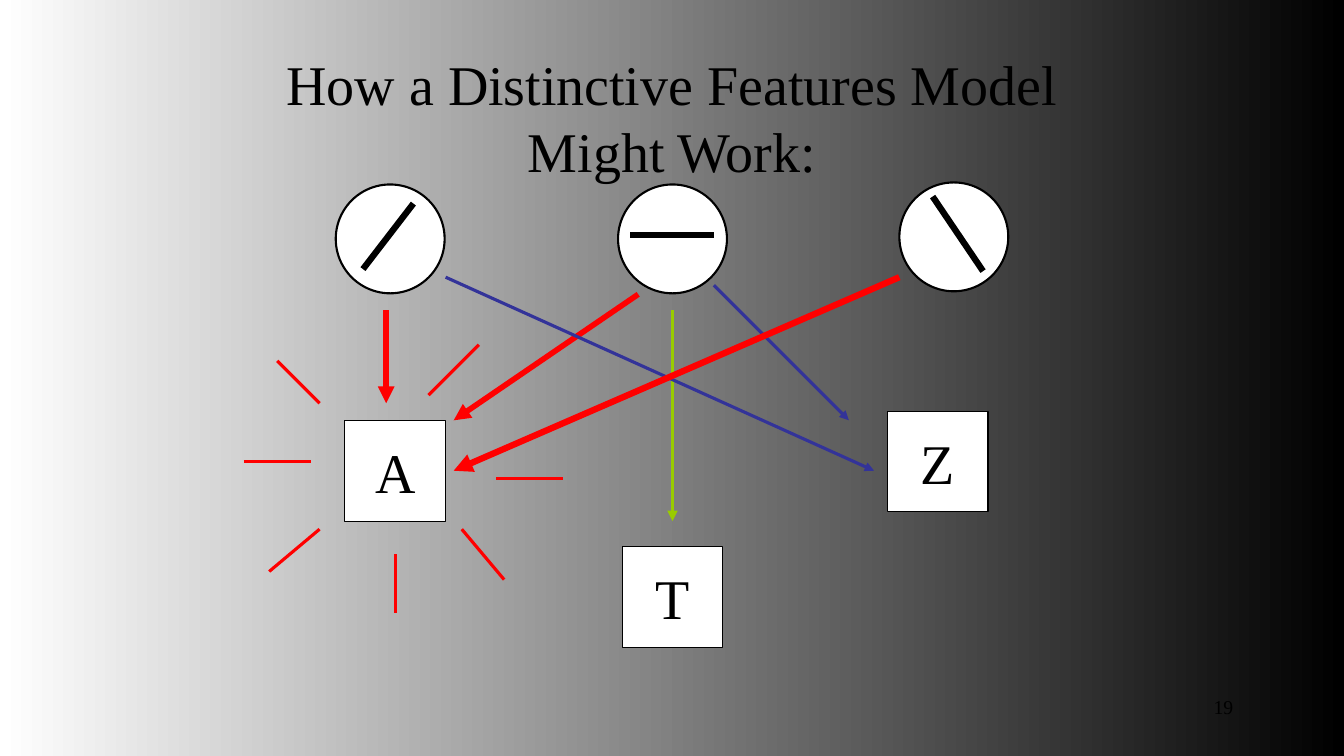
import pptx
import pptx.util
import pptx.dml.color
import pptx.enum.shapes
import pptx.enum.text
import pptx.oxml.ns
from dataclasses import dataclass
from lxml import etree

PX = 9144
SHAPE = pptx.enum.shapes.MSO_SHAPE
ALIGN = pptx.enum.text.PP_ALIGN
MIDDLE = pptx.enum.text.MSO_ANCHOR.MIDDLE


@dataclass(frozen=True)
class Theme:
    font: str = "Times New Roman"
    ink: str = "000000"
    paper: str = "FFFFFF"
    match: str = "FF0000"
    weak: str = "333399"
    single: str = "99CC00"
    large: int = 40
    small: int = 14


THEME = Theme()


def px(n):
    return pptx.util.Emu(n * PX)


def rgb(value):
    return pptx.dml.color.RGBColor.from_string(value)


def add_text(s, text, size, align, wrap):
    tf = s.text_frame
    tf.word_wrap = wrap
    tf.vertical_anchor = MIDDLE
    p = tf.paragraphs[0]
    p.alignment = align
    r = p.add_run()
    r.text = text
    r.font.name = THEME.font
    r.font.size = pptx.util.Pt(size)
    r.font.color.rgb = rgb(THEME.ink)


def add_textbox(shapes, box, text, size, align):
    s = shapes.add_textbox(*map(px, box))
    add_text(s, text, size, align, True)


def add_shape(shapes, kind, box, width):
    s = shapes.add_shape(kind, *map(px, box))
    s.shadow.inherit = False
    s.fill.solid()
    s.fill.fore_color.rgb = rgb(THEME.paper)
    s.line.color.rgb = rgb(THEME.ink)
    s.line.width = pptx.util.Pt(width)
    return s


def add_line(shapes, ends, color, width, arrow=False):
    s = shapes.add_connector(
        pptx.enum.shapes.MSO_CONNECTOR.STRAIGHT, *map(px, ends))
    s.line.color.rgb = rgb(color)
    s.line.width = pptx.util.Pt(width)
    qn = pptx.oxml.ns.qn
    etree.SubElement(s._element.spPr, qn("a:effectLst"))
    if arrow:
        etree.SubElement(s.line._get_or_add_ln(), qn("a:tailEnd"), type="triangle")


def add_offset_line(shapes, x, y, ends, color, width):
    x1, y1, x2, y2 = ends
    add_line(shapes, (x + x1, y + y1, x + x2, y + y2), color, width)


def add_background(slide):
    fill = slide.background.fill
    fill.gradient()
    fill.gradient_angle = 0
    for stop, color, position in zip(
            fill.gradient_stops, (THEME.paper, THEME.ink), (0, 1)):
        stop.color.rgb = rgb(color)
        stop.position = position


def add_letter(shapes, box, letter):
    s = add_shape(shapes, SHAPE.RECTANGLE, box, 0.75)
    add_text(s, letter, THEME.large, ALIGN.CENTER, False)


def add_feature(shapes, box, stroke):
    group = shapes.add_group_shape().shapes
    add_shape(group, SHAPE.OVAL, box, 1.5)
    add_offset_line(group, box[0], box[1], stroke, THEME.ink, 4.5)


def add_rays(shapes, box):
    group = shapes.add_group_shape().shapes
    rays = [
        (-67, -59, -25, -17), (-100, 41, -34, 41), (-75, 150, -25, 108),
        (50, 191, 50, 133), (158, 158, 116, 108), (83, -25, 133, -75),
        (150, 58, 216, 58),
    ]
    for ray in rays:
        add_offset_line(group, box[0], box[1], ray, THEME.match, 2.25)


def add_arrows(shapes, box):
    x, y = box[:2]
    arrows = [
        ((50, 125, 50, 217), THEME.match, 4),
        ((300, 109, 117, 234), THEME.match, 4),
        ((375, 100, 509, 234), THEME.weak, 2.25),
        ((334, 125, 334, 334), THEME.single, 2.5),
        ((109, 92, 534, 284), THEME.weak, 2.25),
        ((559, 92, 117, 284), THEME.match, 4.5),
    ]
    for (x1, y1, x2, y2), color, width in arrows:
        add_line(shapes, (x + x1, y + y1, x + x2, y + y2), color, width, True)


def add_model(shapes, box):
    x, y = box[:2]
    letters = {"T": (284, 359), "Z": (547, 225), "A": (9, 234)}
    boxes = {k: (x + dx, y + dy, 100, 100) for k, (dx, dy) in letters.items()}
    for letter, letter_box in boxes.items():
        add_letter(shapes, letter_box, letter)
    features = [
        (280, 0, (12, 50, 95, 50)),
        (559, -2, (33, 14, 83, 88)),
        (0, 0, (77, 19, 27, 84)),
    ]
    for dx, dy, stroke in features:
        add_feature(shapes, (x + dx, y + dy, 108, 108), stroke)
    add_arrows(shapes, box)
    add_rays(shapes, boxes["A"])


def main():
    prs = pptx.Presentation()
    prs.slide_width, prs.slide_height = px(1333), px(750)
    slide = prs.slides.add_slide(prs.slide_layouts[6])
    add_background(slide)
    add_model(slide.shapes, (333, 183, 667, 459))
    add_textbox(slide.shapes, (265, 78, 803, 75),
                "How a Distinctive Features Model Might Work:",
                THEME.large, ALIGN.CENTER)
    add_textbox(slide.shapes, (955, 683, 278, 36), "19", THEME.small, ALIGN.RIGHT)
    prs.save("out.pptx")


if __name__ == "__main__":
    main()
